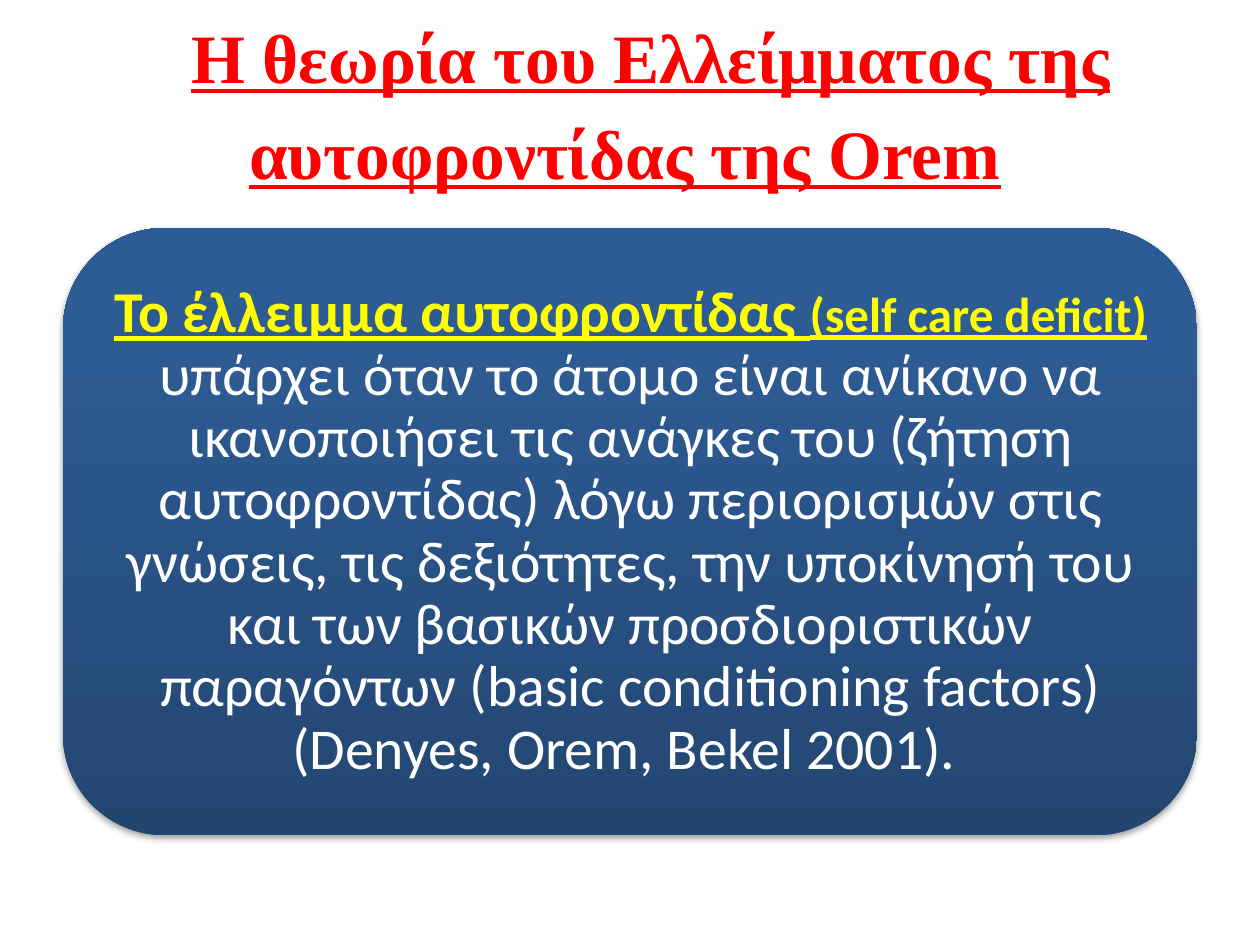
from copy import deepcopy

from pptx import Presentation
from pptx.dml.color import RGBColor
from pptx.enum.shapes import MSO_SHAPE as Shape
from pptx.enum.text import MSO_ANCHOR as Anchor, PP_ALIGN as Align
from pptx.oxml import parse_xml
from pptx.oxml.ns import nsdecls, qn
from pptx.util import Inches, Pt


def colour(value):
    return RGBColor.from_string(value)


class SlideBuilder:
    """Hold the text styles and the current slide."""

    styles = {
        "title": dict(name="Times New Roman", size=Pt(39.6), bold=True, underline=True, color="FF0000"),
        "term": dict(name="Calibri", size=Pt(33), bold=True, underline=True, color="FFFF00"),
        "english": dict(name="Calibri", size=Pt(28), bold=True, underline=True, color="FFFF00"),
        "body": dict(name="Calibri", size=Pt(33), bold=False, underline=False, color="FFFFFF"),
    }

    def __init__(self, presentation):
        self.slide = presentation.slides.add_slide(presentation.slide_layouts[6])

    def text(self, box, runs, spacing, insets, indent=0):
        frame = self.slide.shapes.add_textbox(*map(Inches, box)).text_frame
        frame.word_wrap = True
        frame.vertical_anchor = Anchor.MIDDLE
        for side, inset in zip(("left", "top", "right", "bottom"), insets):
            setattr(frame, f"margin_{side}", Inches(inset))
        paragraph = frame.paragraphs[0]
        paragraph.alignment = Align.CENTER
        paragraph.line_spacing = spacing
        if indent:
            paragraph._p.get_or_add_pPr().set("indent", str(Inches(indent)))
        for style, words in runs:
            run = paragraph.add_run()
            run.text = words
            for key, value in self.styles[style].items():
                if key == "color":
                    run.font.color.rgb = colour(value)
                else:
                    setattr(run.font, key, value)

    def panel(self, box, stops):
        shape = self.slide.shapes.add_shape(Shape.ROUNDED_RECTANGLE, *map(Inches, box))
        shape.line.fill.background()
        shape.fill.gradient()
        shape.fill.gradient_angle = 90
        properties = shape._element.spPr
        stop_list = properties.find(".//" + qn("a:gsLst"))
        stop_list.append(deepcopy(stop_list[0]))
        for stop, (position, value) in zip(shape.fill.gradient_stops, stops):
            stop.position = position
            stop.color.rgb = colour(value)
        shape.shadow.inherit = False
        properties.find(qn("a:effectLst")).append(parse_xml(
            f'<a:outerShdw {nsdecls("a")} blurRad="{Pt(3.1)}" dist="{Pt(1.8)}" dir="5400000" rotWithShape="0">'
            '<a:srgbClr val="000000"><a:alpha val="35000"/></a:srgbClr></a:outerShdw>'))


def main():
    presentation = Presentation()
    presentation.slide_width = Inches(10)
    presentation.slide_height = Inches(7.5)
    builder = SlideBuilder(presentation)
    builder.text((0.43, 0.29, 9.06, 1.5),
                 [("title", "Η θεωρία του Ελλείμματος της αυτοφροντίδας της Orem")],
                 1.15, (0.1, 0.05, 0.1, 0.58), indent=0.41)
    builder.panel((0.5, 1.81, 9, 4.82), [(0, "234671"), (0.8, "2D5B93"), (1, "2B5C96")])
    builder.text((0.74, 2.05, 8.53, 4.35), [
        ("term", "Το έλλειμμα αυτοφροντίδας "),
        ("english", "(self care deficit) "),
        ("body", "υπάρχει όταν το άτομο είναι ανίκανο να ικανοποιήσει τις ανάγκες του "
                 "(ζήτηση αυτοφροντίδας) λόγω περιορισμών στις γνώσεις, τις δεξιότητες, "
                 "την υποκίνησή του και των βασικών προσδιοριστικών παραγόντων "
                 "(basic conditioning factors) (Denyes, Orem, Bekel 2001). "),
    ], 0.9, (0.14,) * 4)
    presentation.save("out.pptx")


if __name__ == "__main__":
    main()
